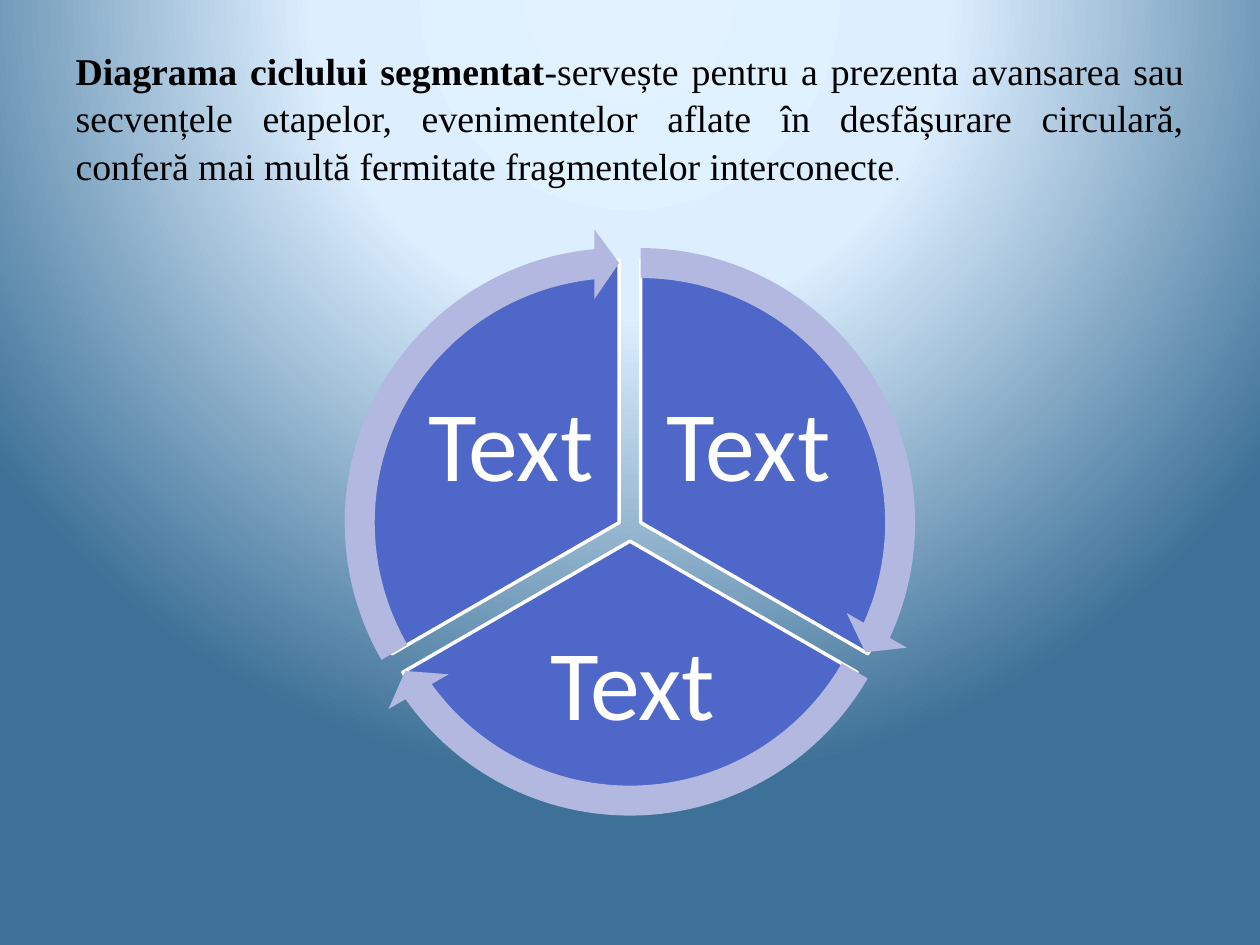
from dataclasses import dataclass
from math import cos, radians, sin

from pptx import Presentation
from pptx.dml.color import RGBColor
from pptx.enum.shapes import MSO_SHAPE
from pptx.enum.text import MSO_ANCHOR, MSO_AUTO_SIZE, PP_ALIGN
from pptx.oxml import parse_xml
from pptx.oxml.ns import nsdecls
from pptx.util import Cm, Pt


@dataclass(frozen=True)
class Theme:
    title_font: str = "Times New Roman"
    label_font: str = "Calibri"
    title_size: float = 21.6
    full_stop_size: float = 10.8
    label_size: float = 57
    title_color: str = "000000"
    label_color: str = "FFFFFF"
    segment: str = "4E67C8"
    outline: str = "FFFFFF"
    arrow: str = "B2B8E0"
    background: tuple = ((0, "E3F2FF"), (40, "DDEFFF"), (100, "3E7197"))


THEME = Theme()
TITLE_RUNS = (
    ("Diagrama ciclului segmentat", True, THEME.title_size),
    ("-servește pentru a prezenta avansarea sau secvențele etapelor, "
     "evenimentelor aflate în desfășurare circulară, conferă mai multă "
     "fermitate fragmentelor interconecte", False, THEME.title_size),
    (".", False, THEME.full_stop_size),
)
# Label, then the centre offset and size of its box in cm
SEGMENTS = (
    ("Text", 2.39, -1.6, 3.76, 3.15),
    ("Text", 0.06, 3.21, 5.66, 2.77),
    ("Text", -2.39, -1.6, 3.76, 3.15),
)


def rgb(color):
    return RGBColor.from_string(color)


def centred_box(x, y, width, height):
    return Cm(x - width / 2), Cm(y - height / 2), Cm(width), Cm(height)


def paint_background(slide):
    """Radial gradient whose focus lies above the slide."""
    stops = "".join(
        f'<a:gs pos="{position * 1000}"><a:srgbClr val="{color}"/></a:gs>'
        for position, color in THEME.background)
    slide.element.cSld.insert(0, parse_xml(
        f'<p:bg {nsdecls("p", "a")}><p:bgPr><a:gradFill rotWithShape="1">'
        f'<a:gsLst>{stops}</a:gsLst><a:path path="circle">'
        '<a:fillToRect l="50000" t="-80000" r="50000" b="180000"/></a:path>'
        '</a:gradFill><a:effectLst/></p:bgPr></p:bg>'))


def fill_title(slide, left, top, width, height):
    title = slide.shapes.title
    title.left, title.top = Cm(left), Cm(top)
    title.width, title.height = Cm(width), Cm(height)
    frame = title.text_frame
    frame.auto_size = MSO_AUTO_SIZE.NONE
    frame.vertical_anchor = MSO_ANCHOR.MIDDLE
    paragraph = frame.paragraphs[0]
    paragraph.alignment = PP_ALIGN.JUSTIFY
    paragraph.line_spacing = 1.05
    for text, bold, size in TITLE_RUNS:
        run = paragraph.add_run()
        run.text = text
        run.font.name = THEME.title_font
        run.font.size = Pt(size)
        run.font.bold = bold
        run.font.color.rgb = rgb(THEME.title_color)


def add_round_shape(group, kind, box, color, adjustments):
    shape = group.shapes.add_shape(kind, *box)
    for index, value in enumerate(adjustments):
        shape.adjustments[index] = value
    shape.shadow.inherit = False
    shape.fill.solid()
    shape.fill.fore_color.rgb = rgb(color)
    shape.line.fill.background()
    return shape


def add_label(group, text, box):
    frame = group.shapes.add_textbox(*box).text_frame
    frame.word_wrap = True
    frame.vertical_anchor = MSO_ANCHOR.MIDDLE
    frame.margin_left = frame.margin_right = Cm(0.2)
    frame.margin_top = frame.margin_bottom = Cm(0.2)
    paragraph = frame.paragraphs[0]
    paragraph.text = text
    paragraph.alignment = PP_ALIGN.CENTER
    paragraph.line_spacing = 0.9
    paragraph.font.name = THEME.label_font
    paragraph.font.size = Pt(THEME.label_size)
    paragraph.font.color.rgb = rgb(THEME.label_color)


def add_segmented_cycle(slide, left, top, size):
    """Pie segments pushed apart, each with an arrow along its rim."""
    group = slide.shapes.add_group_shape()
    center_x, center_y = left + size / 2, top + size / 2
    pie_size, gap, head_angle = 10.57, 0.25, 5.46
    angle_unit = 0.6  # adjustment value per degree
    sweep = 360 / len(SEGMENTS)
    arrows = []
    for index, (text, dx, dy, width, height) in enumerate(SEGMENTS):
        start = (270 + index * sweep) % 360
        end = (start + sweep) % 360
        middle = radians(start + sweep / 2)
        x, y = center_x + gap * cos(middle), center_y + gap * sin(middle)
        pie = add_round_shape(
            group, MSO_SHAPE.PIE, centred_box(x, y, pie_size, pie_size),
            THEME.segment, (start * angle_unit, end * angle_unit))
        pie.line.color.rgb = rgb(THEME.outline)
        pie.line.width = Pt(2)
        add_label(group, text,
                  centred_box(center_x + dx, center_y + dy, width, height))
        arrows.append((centred_box(x, y, size, size),
                       (0.051, head_angle * angle_unit,
                        (end - head_angle) * angle_unit,
                        start * angle_unit, 0.059)))
    for box, adjustments in arrows:
        add_round_shape(group, MSO_SHAPE.CIRCULAR_ARROW, box,
                        THEME.arrow, adjustments)


def main():
    presentation = Presentation()
    presentation.slide_width, presentation.slide_height = Cm(25.4), Cm(19.05)
    slide = presentation.slides.add_slide(presentation.slide_layouts[5])
    paint_background(slide)
    fill_title(slide, 1.27, 0.76, 22.86, 3.18)
    add_segmented_cycle(slide, 6.77, 4.73, 11.86)
    presentation.save("out.pptx")


if __name__ == "__main__":
    main()
